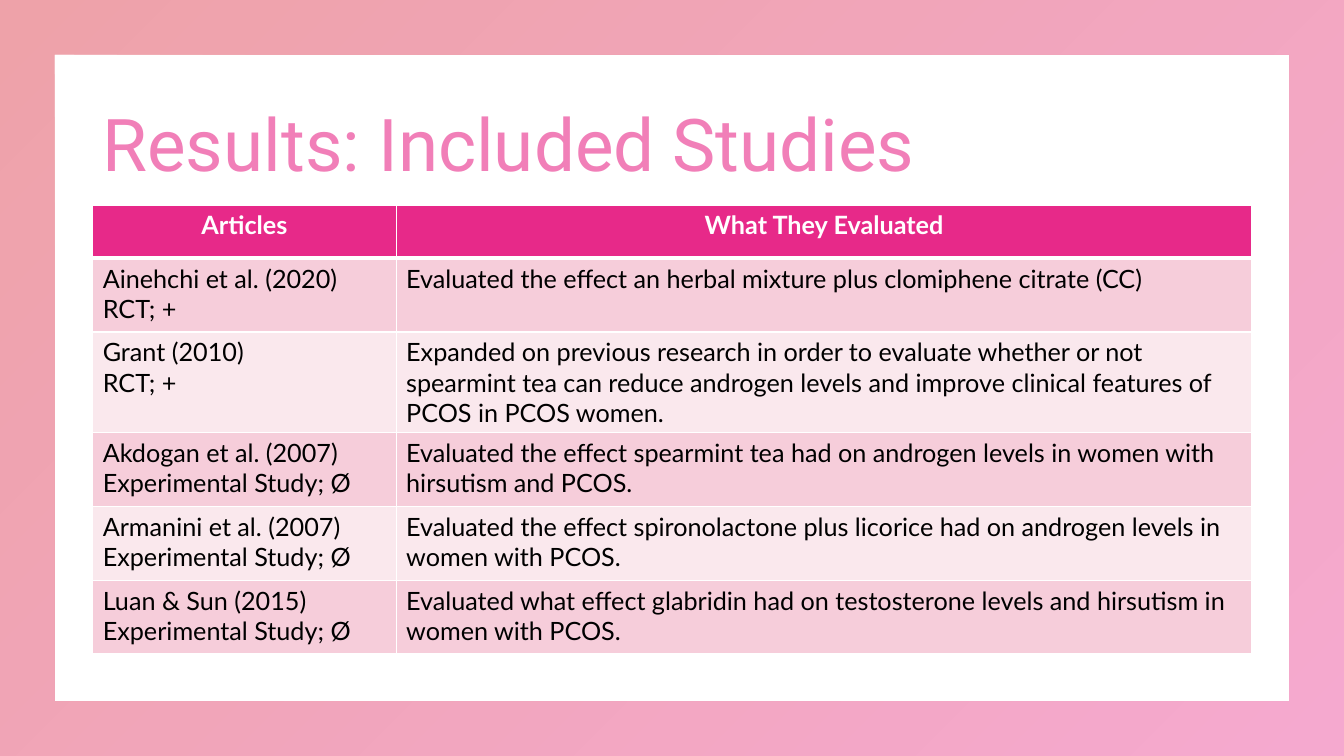
from pptx import Presentation
from pptx.dml.color import RGBColor
from pptx.enum.shapes import MSO_SHAPE
from pptx.enum.text import MSO_ANCHOR, PP_ALIGN
from pptx.oxml import parse_xml
from pptx.oxml.ns import nsdecls, qn
from pptx.util import Pt
from lxml.etree import SubElement

WIDTH, HEIGHT = 960, 540
LEFT, CONTENT_WIDTH = 66.24, 828
MAGENTA, WHITE, BLACK = "E72989", "FFFFFF", "000000"
BANDS = ("F6CDDA", "FAE8ED")
COLUMN_WIDTHS = (216.72, 611.28)
HEADER_HEIGHT, STUDY_HEIGHT = 38, 52.7

HEADINGS = ("Articles", "What They Evaluated")
STUDIES = (
    ("Ainehchi et al. (2020)\nRCT; +",
     "Evaluated the effect an herbal mixture plus clomiphene citrate (CC)"),
    ("Grant (2010)\nRCT; +",
     "Expanded on previous research in order to evaluate whether or not "
     "spearmint tea can reduce androgen levels and improve clinical features "
     "of PCOS in PCOS women."),
    ("Akdogan et al. (2007)\nExperimental Study; Ø",
     "Evaluated the effect spearmint tea had on androgen levels in women with "
     "hirsutism and PCOS."),
    ("Armanini et al. (2007)\nExperimental Study; Ø",
     "Evaluated the effect spironolactone plus licorice had on androgen levels "
     "in women with PCOS."),
    ("Luan & Sun (2015)\nExperimental Study; Ø",
     "Evaluated what effect glabridin had on testosterone levels and hirsutism "
     "in women with PCOS."),
)


def rgb(hex_color):
    return RGBColor.from_string(hex_color)


def add_run(paragraph, text, font, size, color, bold=False):
    run = paragraph.add_run()
    run.text = text
    run.font.name = font
    run.font.size = Pt(size)
    run.font.bold = bold
    run.font.color.rgb = rgb(color)


def add_border_frame(slide):
    frame = slide.shapes.add_shape(MSO_SHAPE.FRAME, 0, 0, Pt(WIDTH), Pt(HEIGHT))
    frame.adjustments[0] = 0.072
    frame.shadow.inherit = False
    frame.line.fill.background()
    frame.fill.gradient()
    frame.fill.gradient_angle = 315
    for stop, color in zip(frame.fill.gradient_stops, ("D51728", MAGENTA)):
        stop.color.rgb = rgb(color)
    for color in frame.element.spPr.iter(qn("a:srgbClr")):
        SubElement(color, qn("a:alpha"), val="40000")


def add_title(slide, text):
    title = slide.shapes.add_textbox(
        Pt(LEFT), Pt(53.28), Pt(CONTENT_WIDTH), Pt(104.4)).text_frame
    title.word_wrap = True
    title.vertical_anchor = MSO_ANCHOR.MIDDLE
    title.paragraphs[0].line_spacing = 0.9
    add_run(title.paragraphs[0], text, "Roboto", 52, "F17FB8")


def set_borders(cell, top, bottom):
    """Draw white cell borders; top and bottom are widths in points."""
    properties = cell._tc.get_or_add_tcPr()
    widths = (("lnL", 1), ("lnR", 1), ("lnT", top), ("lnB", bottom))
    for position, (side, width) in enumerate(widths):
        properties.insert(position, parse_xml(
            f'<a:{side} {nsdecls("a")} w="{Pt(width)}"><a:solidFill>'
            f'<a:srgbClr val="{WHITE}"/></a:solidFill></a:{side}>'))


def fill_cell(cell, text, fill, color, header=False):
    cell.fill.solid()
    cell.fill.fore_color.rgb = rgb(fill)
    frame = cell.text_frame
    for index, line in enumerate(text.split("\n")):
        paragraph = frame.add_paragraph() if index else frame.paragraphs[0]
        paragraph.alignment = PP_ALIGN.CENTER if header else PP_ALIGN.LEFT
        add_run(paragraph, line, "Lato", 18, color, header)


def add_studies_table(slide):
    table = slide.shapes.add_table(
        len(STUDIES) + 1, len(HEADINGS), Pt(LEFT), Pt(146.4), Pt(CONTENT_WIDTH),
        Pt(HEADER_HEIGHT + STUDY_HEIGHT * len(STUDIES))).table
    for column, width in zip(table.columns, COLUMN_WIDTHS):
        column.width = Pt(width)
    for row, texts in enumerate((HEADINGS, *STUDIES)):
        header = row == 0
        table.rows[row].height = Pt(HEADER_HEIGHT if header else STUDY_HEIGHT)
        fill = MAGENTA if header else BANDS[(row - 1) % 2]
        for column, text in enumerate(texts):
            cell = table.cell(row, column)
            fill_cell(cell, text, fill, WHITE if header else BLACK, header)
            set_borders(cell, top=3 if row == 1 else 1, bottom=3 if header else 1)


def main():
    deck = Presentation()
    deck.slide_width, deck.slide_height = Pt(WIDTH), Pt(HEIGHT)
    slide = deck.slides.add_slide(deck.slide_layouts[6])
    add_border_frame(slide)
    add_title(slide, "Results: Included Studies")
    add_studies_table(slide)
    deck.save("out.pptx")


if __name__ == "__main__":
    main()
